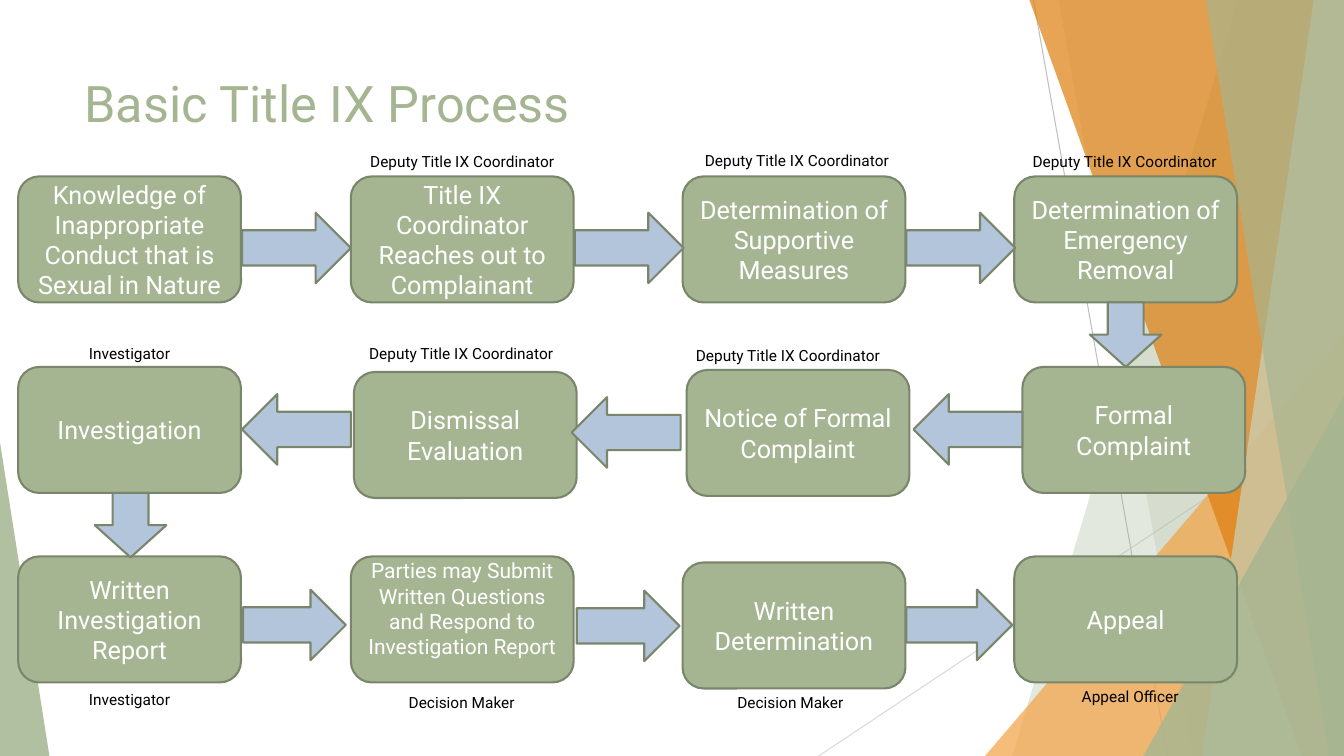
from pptx import Presentation
from pptx.dml.color import RGBColor
from pptx.enum.shapes import MSO_CONNECTOR, MSO_SHAPE
from pptx.enum.text import MSO_ANCHOR, PP_ALIGN
from pptx.oxml.ns import qn
from pptx.util import Inches, Pt
from lxml import etree

STRAIGHT = MSO_CONNECTOR.STRAIGHT
ROUNDED = MSO_SHAPE.ROUNDED_RECTANGLE
RIGHT_ARROW = MSO_SHAPE.RIGHT_ARROW
DOWN_ARROW = MSO_SHAPE.DOWN_ARROW
TRIANGLE = MSO_SHAPE.ISOSCELES_TRIANGLE
TOP, MIDDLE = MSO_ANCHOR.TOP, MSO_ANCHOR.MIDDLE
LEFT, CENTER = PP_ALIGN.LEFT, PP_ALIGN.CENTER

FONT = "Roboto"
WIDTH, HEIGHT = 13.33, 7.5
BOX_WIDTH, BOX_HEIGHT = 2.21, 1.25
ARROW_HEIGHT = 0.7

WHITE = RGBColor(0xFF, 0xFF, 0xFF)
BLACK = RGBColor(0x00, 0x00, 0x00)
SAGE = RGBColor(0xA5, 0xB5, 0x92)
PALE_SAGE = RGBColor(0xC9, 0xD3, 0xBE)
DARK_SAGE = RGBColor(0x7A, 0x86, 0x6C)
ORANGE = RGBColor(0xF3, 0xA4, 0x47)
DARK_ORANGE = RGBColor(0xDD, 0x7E, 0x0E)
BLUE = RGBColor(0xB3, 0xC5, 0xDA)
GREY = RGBColor(0xBF, 0xBF, 0xBF)
LIGHT_GREY = RGBColor(0xD9, 0xD9, 0xD9)

STEPS = [
    (0.18, 1.75, "Knowledge of Inappropriate Conduct that is Sexual in Nature"),
    (3.48, 1.75, "Title IX Coordinator Reaches out to Complainant"),
    (6.77, 1.75, "Determination of Supportive Measures"),
    (10.06, 1.75, "Determination of Emergency Removal"),
    (10.14, 3.64, "Formal Complaint"),
    (6.81, 3.67, "Notice of Formal Complaint"),
    (3.51, 3.69, "Dismissal Evaluation"),
    (0.18, 3.64, "Investigation"),
    (0.18, 5.52, "Written Investigation Report"),
    (6.77, 5.58, "Written Determination"),
    (10.06, 5.52, "Appeal"),
]
QUESTIONS_STEP = (
    3.48, 5.52,
    "Parties may Submit Written Questions and Respond to Investigation Report",
)

SIDE_ARROWS = [
    (2.4, 2.11, 1.08, 0), (5.7, 2.11, 1.08, 0), (8.99, 2.11, 1.08, 0),
    (9.06, 3.91, 1.08, 180), (5.67, 3.94, 1.08, 180), (2.4, 3.91, 1.08, 180),
    (2.41, 5.85, 1.02, 0), (5.72, 5.86, 1.02, 0), (8.99, 5.85, 1.05, 0),
]
DOWN_ARROWS = [(10.81, 3), (0.94, 4.89)]

DEPUTY = "Deputy Title IX Coordinator"
ROLES = [
    (3.49, 1.46, 2.19, DEPUTY),
    (6.81, 1.45, 2.19, DEPUTY),
    (10.06, 1.46, 2.19, DEPUTY),
    (6.72, 3.38, 2.19, DEPUTY),
    (3.48, 3.36, 2.19, DEPUTY),
    (0.57, 3.36, 1.43, "Investigator"),
    (0.57, 6.8, 1.43, "Investigator"),
    (3.68, 6.83, 1.8, "Decision Maker"),
    (6.94, 6.83, 1.8, "Decision Maker"),
    (10.34, 6.77, 1.74, "Appeal Officer"),
]


def paint(shape, color, opacity=100):
    shape.shadow.inherit = False
    shape.fill.solid()
    shape.fill.fore_color.rgb = color
    shape.line.fill.background()
    if opacity < 100:
        color_element = shape.fill._xPr.find(qn("a:solidFill"))[0]
        alpha = etree.SubElement(color_element, qn("a:alpha"))
        alpha.set("val", str(opacity * 1000))


def outline(shape):
    shape.line.color.rgb = DARK_SAGE
    shape.line.width = Pt(1.5)


def write(shape, text, size, color, alignment, anchor):
    frame = shape.text_frame
    frame.word_wrap = True
    frame.vertical_anchor = anchor
    paragraph = frame.paragraphs[0]
    paragraph.text = text
    paragraph.alignment = alignment
    paragraph.font.size = Pt(size)
    paragraph.font.name = FONT
    paragraph.font.color.rgb = color


def add_line(slide, start, end, color):
    ends = [Inches(value) for value in (*start, *end)]
    line = slide.shapes.add_connector(STRAIGHT, *ends)
    line.line.color.rgb = color
    line.line.width = Pt(0.75)
    etree.SubElement(line._element.spPr, qn("a:effectLst"))


def add_band(slide, top_left, bottom_left, color, opacity):
    builder = slide.shapes.build_freeform(Inches(top_left), 0)
    corners = [(WIDTH, 0), (WIDTH, HEIGHT), (bottom_left, HEIGHT)]
    builder.add_line_segments([(Inches(x), Inches(y)) for x, y in corners])
    paint(builder.convert_to_shape(), color, opacity)


def add_triangle(slide, left, top, width, apex, color, opacity):
    triangle = slide.shapes.add_shape(
        TRIANGLE, Inches(left), Inches(top), Inches(width), Inches(HEIGHT - top))
    triangle.adjustments[0] = apex
    paint(triangle, color, opacity)


def add_backdrop(slide):
    add_line(slide, (10.25, 0), (11.58, HEIGHT), GREY)
    add_line(slide, (WIDTH, 4.03), (8.12, HEIGHT), LIGHT_GREY)
    add_band(slide, 12.28, 10.04, SAGE, 30)
    add_band(slide, 10.5, 11.83, SAGE, 20)
    add_triangle(slide, 9.77, 3.33, 3.56, 1, ORANGE, 72)
    add_band(slide, 10.21, 12.91, DARK_ORANGE, 70)
    add_band(slide, 13.03, 11.92, PALE_SAGE, 70)
    add_band(slide, 11.96, 13.18, SAGE, 65)
    add_triangle(slide, 11.34, 3.93, 1.99, 1, SAGE, 80)
    add_triangle(slide, 0, 4.39, 0.49, 0, SAGE, 85)


def add_text(slide, left, top, width, height, text, size, color, alignment):
    box = slide.shapes.add_textbox(
        Inches(left), Inches(top), Inches(width), Inches(height))
    write(box, text, size, color, alignment, TOP)


def add_step(slide, left, top, text, size=18):
    step = slide.shapes.add_shape(
        ROUNDED, Inches(left), Inches(top), Inches(BOX_WIDTH), Inches(BOX_HEIGHT))
    paint(step, SAGE)
    outline(step)
    write(step, text, size, WHITE, CENTER, MIDDLE)
    return step


def add_arrow(slide, kind, left, top, width, height, rotation=0):
    arrow = slide.shapes.add_shape(
        kind, Inches(left), Inches(top), Inches(width), Inches(height))
    arrow.rotation = rotation
    paint(arrow, BLUE)
    outline(arrow)


def main():
    presentation = Presentation()
    presentation.slide_width = Inches(WIDTH)
    presentation.slide_height = Inches(HEIGHT)
    slide = presentation.slides.add_slide(presentation.slide_layouts[6])

    add_backdrop(slide)
    add_text(slide, 0.74, 0.67, 9.4, 1.44, "Basic Title IX Process", 36, SAGE, LEFT)
    for left, top, text in STEPS:
        add_step(slide, left, top, text)
    questions = add_step(slide, *QUESTIONS_STEP, size=15)
    questions.text_frame.margin_bottom = Inches(0.27)
    for left, top, width, rotation in SIDE_ARROWS:
        add_arrow(slide, RIGHT_ARROW, left, top, width, ARROW_HEIGHT, rotation)
    for left, top in DOWN_ARROWS:
        add_arrow(slide, DOWN_ARROW, left, top, 0.71, 0.64)
    for left, top, width, role in ROLES:
        add_text(slide, left, top, width, 0.29, role, 11, BLACK, CENTER)

    presentation.save("out.pptx")


if __name__ == "__main__":
    main()
